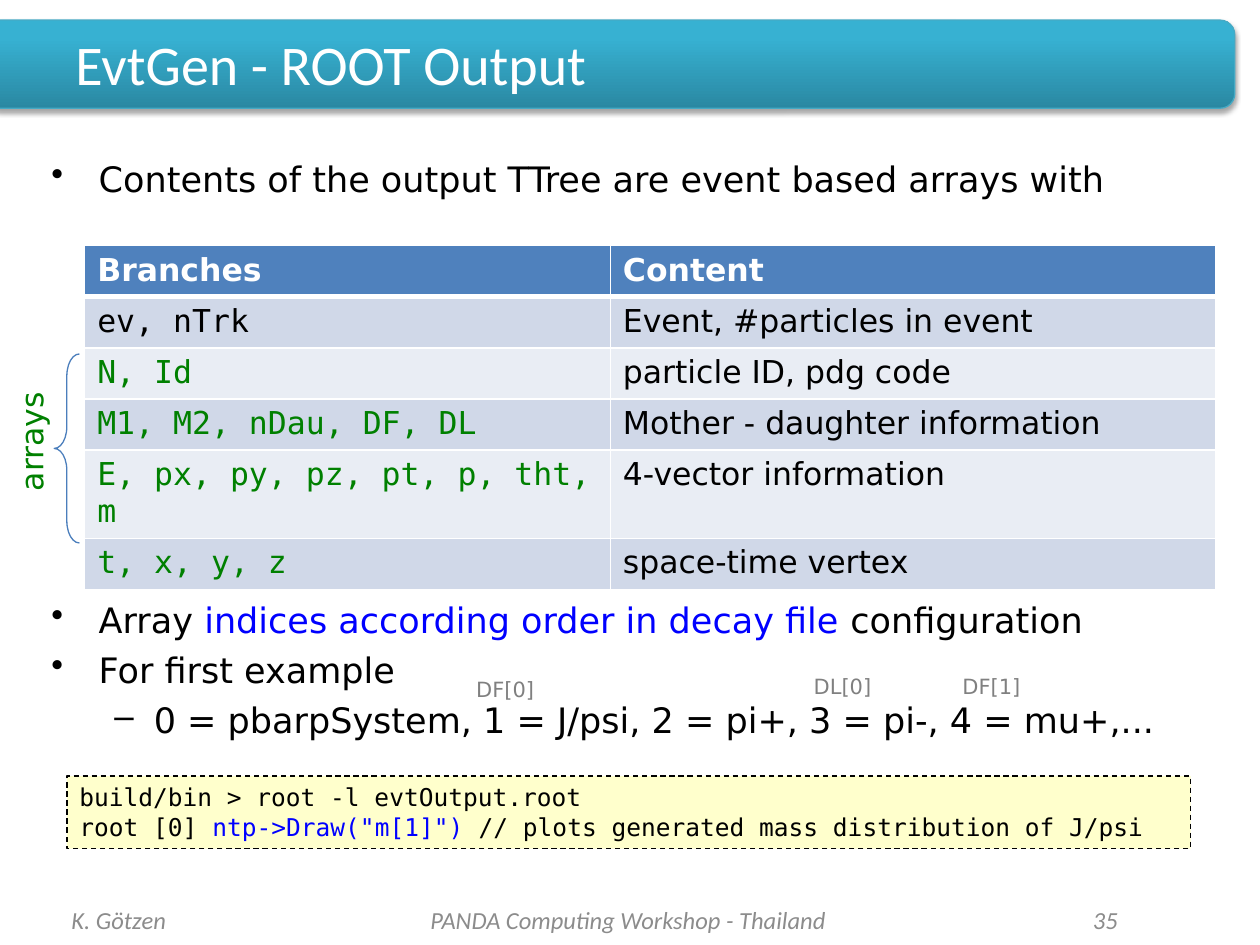
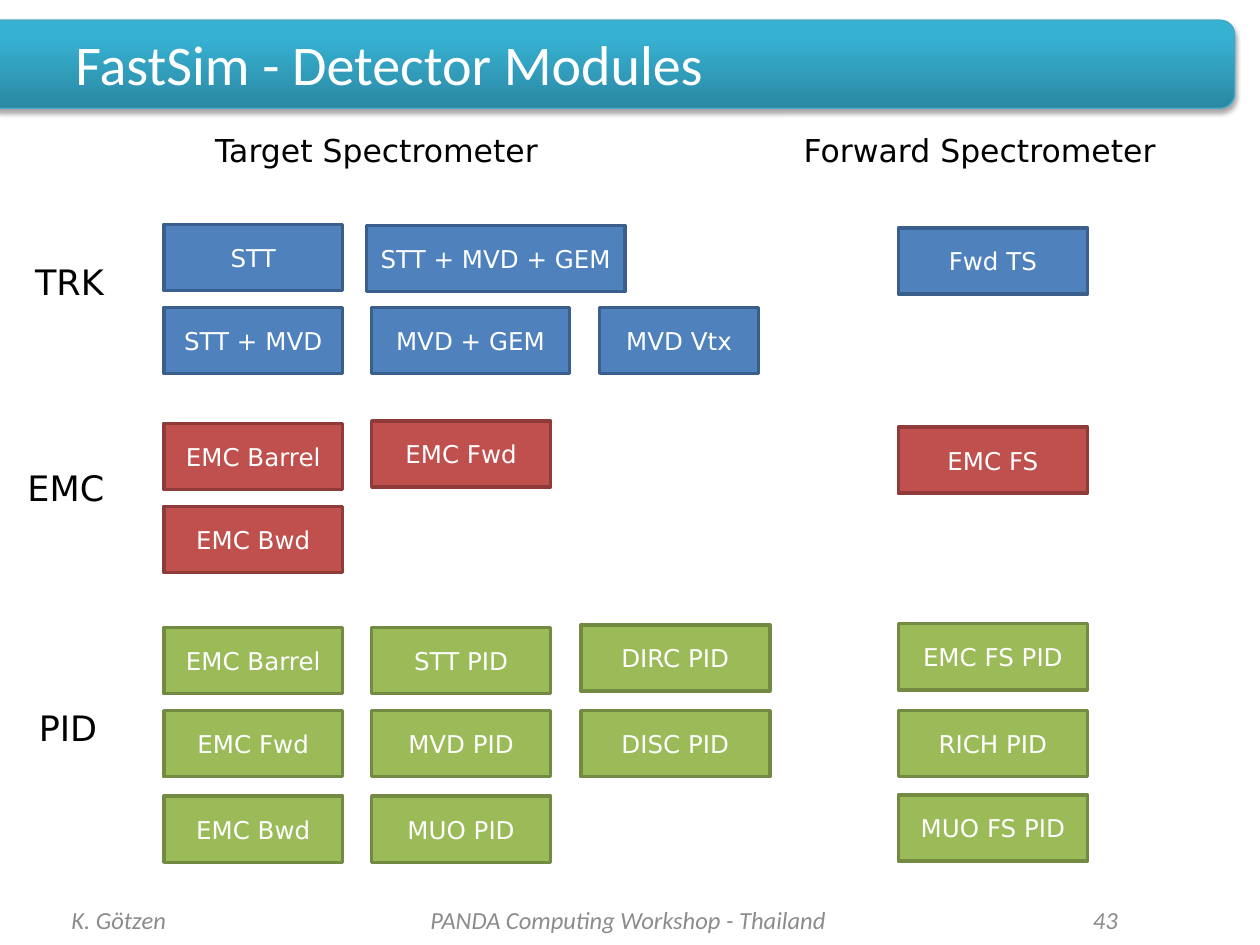
"""Build two workshop slides on event generator output and detector modules."""
import pptx
import pptx.util
import pptx.dml.color
import pptx.enum.dml
import pptx.enum.shapes
import pptx.enum.text
import pptx.oxml
import pptx.oxml.ns

Pt = pptx.util.Pt
RGBColor = pptx.dml.color.RGBColor
Shape = pptx.enum.shapes.MSO_SHAPE
Align = pptx.enum.text.PP_ALIGN
Anchor = pptx.enum.text.MSO_ANCHOR

WHITE = RGBColor(0xFF, 0xFF, 0xFF)
BLACK = RGBColor(0x00, 0x00, 0x00)
BAND_DARK = RGBColor(0x2A, 0x88, 0xA2)
BAND_LIGHT = RGBColor(0x37, 0xB1, 0xD2)
BAND_LINE = RGBColor(0x46, 0xAA, 0xC5)
FOOTER_GREY = RGBColor(0x8C, 0x8C, 0x8C)
LABEL_GREY = RGBColor(0x80, 0x80, 0x80)
HIGHLIGHT = RGBColor(0x00, 0x00, 0xFF)
ARRAY_GREEN = RGBColor(0x00, 0x80, 0x00)
BRACE_BLUE = RGBColor(0x4B, 0x7E, 0xBC)
CODE_YELLOW = RGBColor(0xFF, 0xFF, 0xCC)
ROW_DARK = RGBColor(0xD0, 0xD8, 0xE8)
ROW_LIGHT = RGBColor(0xE9, 0xED, 0xF4)
BLUE = RGBColor(0x4F, 0x81, 0xBD)
BLUE_LINE = RGBColor(0x3A, 0x5F, 0x8C)
RED = RGBColor(0xC0, 0x50, 0x4D)
RED_LINE = RGBColor(0x8E, 0x3B, 0x39)
GREEN = RGBColor(0x9B, 0xBB, 0x59)
GREEN_LINE = RGBColor(0x73, 0x8A, 0x42)

SANS = "DejaVu Sans"
MONO = "DejaVu Sans Mono"
TITLE = {"name": "Calibri", "size": Pt(32)}
FOOTER = {"name": "Calibri", "size": Pt(14), "italic": True}
BODY = {"name": SANS, "size": Pt(20)}
HEADING = {"name": SANS, "size": Pt(18)}
MODULE = {"name": SANS, "size": Pt(14)}
INDEX_LABEL = {"name": SANS, "size": Pt(12)}
CODE = {"name": MONO, "size": Pt(14)}
NAMESPACE = pptx.oxml.ns.nsdecls("a")


def write(paragraph, runs, font_format):
    """Add coloured runs with one font format to a paragraph."""
    for text, color in runs:
        run = paragraph.add_run()
        run.text = text
        run.font.color.rgb = color
        for name, value in font_format.items():
            setattr(run.font, name, value)


def add_text(slide, box, text, color, font_format, alignment=Align.LEFT, **frame_format):
    """Add a one-line text box and return it."""
    text_box = slide.shapes.add_textbox(*map(Pt, box))
    for name, value in frame_format.items():
        setattr(text_box.text_frame, name, value)
    paragraph = text_box.text_frame.paragraphs[0]
    paragraph.alignment = alignment
    write(paragraph, [(text, color)], font_format)
    return text_box


presentation = pptx.Presentation()
presentation.slide_width, presentation.slide_height = Pt(720), Pt(540)

slides = []
for title, number in (("EvtGen - ROOT Output", "35"), ("FastSim - Detector Modules", "43")):
    slide = presentation.slides.add_slide(presentation.slide_layouts[6])
    slides.append(slide)
    band = slide.shapes.add_shape(
        Shape.ROUNDED_RECTANGLE, Pt(-8.6), Pt(11.5), Pt(714.2), Pt(50.4))
    band.fill.gradient()
    band.fill.gradient_angle = 90
    for stop, color, position in zip(
            band.fill.gradient_stops, (BAND_DARK, BAND_LIGHT), (0, 0.8)):
        stop.color.rgb = color
        stop.position = position
    band.line.color.rgb = BAND_LINE
    band.line.width = Pt(0.75)
    band.shadow.inherit = False
    effects = band._element.spPr.find(pptx.oxml.ns.qn("a:effectLst"))
    effects.append(pptx.oxml.parse_xml(
        f'<a:outerShdw {NAMESPACE} blurRad="{Pt(3.1)}" dist="{Pt(1.8)}" dir="5400000" '
        'rotWithShape="0"><a:srgbClr val="000000"><a:alpha val="35000"/></a:srgbClr>'
        '</a:outerShdw>'))
    add_text(slide, (36, 13, 648, 46), title, WHITE, TITLE,
             word_wrap=True, vertical_anchor=Anchor.MIDDLE)
    for left, width, text, alignment in (
            (33.8, 167.8, "K. Götzen", Align.LEFT),
            (218.2, 281.5, "PANDA Computing Workshop - Thailand", Align.CENTER),
            (540, 105.8, number, Align.RIGHT)):
        add_text(slide, (left, 511.2, width, 28.8), text, FOOTER_GREY, FOOTER, alignment,
                 word_wrap=True, vertical_anchor=Anchor.MIDDLE)

output_slide, modules_slide = slides

bullet_blocks = (
    (86.4, [("•", 27, 27, [("Contents of the output TTree are event based arrays with", BLACK)])]),
    (338.3, [
        ("•", 27, 27, [("Array ", BLACK), ("indices according order in decay file ", HIGHLIGHT),
                       ("configuration", BLACK)]),
        ("•", 27, 27, [("For first example", BLACK)]),
        ("–", 58.5, 22.5, [("0 = pbarpSystem, 1 = J/psi, 2 = pi+, 3 = pi-, 4 = mu+,...", BLACK)]),
    ]),
)
for top, bullets in bullet_blocks:
    text_box = output_slide.shapes.add_textbox(Pt(22.3), Pt(top), Pt(675.4), Pt(28 * len(bullets) + 7))
    frame = text_box.text_frame
    frame.word_wrap = True
    for index, (mark, margin, hanging, runs) in enumerate(bullets):
        paragraph = frame.add_paragraph() if index else frame.paragraphs[0]
        paragraph.space_before = Pt(4.7 if index else 0)
        properties = paragraph._p.get_or_add_pPr()
        properties.set("marL", str(Pt(margin)))
        properties.set("indent", str(-Pt(hanging)))
        properties.append(pptx.oxml.parse_xml(f'<a:buChar {NAMESPACE} char="{mark}"/>'))
        write(paragraph, runs, BODY)

branch_rows = (
    ("Branches", "Content"),
    ("ev, nTrk", "Event, #particles in event"),
    ("N, Id", "particle ID, pdg code"),
    ("M1, M2, nDau, DF, DL", "Mother - daughter information"),
    ("E, px, py, pz, pt, p, tht, m", "4-vector information"),
    ("t, x, y, z", "space-time vertex"),
)
table = output_slide.shapes.add_table(
    len(branch_rows), 2, Pt(48.4), Pt(140.4), Pt(646.2), Pt(175.2)).table
for column, width in zip(table.columns, (300.4, 345.8)):
    column.width = Pt(width)
row_fills = (BLUE, ROW_DARK, ROW_LIGHT, ROW_DARK, ROW_LIGHT, ROW_DARK)
for row_index, (texts, fill) in enumerate(zip(branch_rows, row_fills)):
    table.rows[row_index].height = Pt(29.2)
    for column_index, text in enumerate(texts):
        cell = table.cell(row_index, column_index)
        is_header = row_index == 0
        is_array = row_index > 1 and column_index == 0
        color = WHITE if is_header else ARRAY_GREEN if is_array else BLACK
        font = SANS if is_header or column_index else MONO
        write(cell.text_frame.paragraphs[0], [(text, color)],
              {"name": font, "size": Pt(18), "bold": is_header})
        cell.fill.solid()
        cell.fill.fore_color.rgb = fill
        widths = {"lnL": 1, "lnR": 1, "lnT": 3 if row_index == 1 else 1, "lnB": 3 if is_header else 1}
        for position, (side, width) in enumerate(widths.items()):
            cell._tc.get_or_add_tcPr().insert(position, pptx.oxml.parse_xml(
                f'<a:{side} {NAMESPACE} w="{Pt(width)}"><a:solidFill>'
                f'<a:srgbClr val="{WHITE}"/></a:solidFill></a:{side}>'))

arrays_label = add_text(output_slide, (-18, 237.6, 71.3, 28.8), "arrays", ARRAY_GREEN, HEADING,
                        word_wrap=False)
arrays_label.rotation = 270
brace = output_slide.shapes.add_shape(Shape.LEFT_BRACE, Pt(31), Pt(202.3), Pt(14.4), Pt(108))
brace.adjustments[0] = 0.87
brace.fill.background()
brace.line.color.rgb = BRACE_BLUE
brace.line.width = Pt(0.75)
brace.shadow.inherit = False

code_box = output_slide.shapes.add_shape(Shape.RECTANGLE, Pt(38.2), Pt(443.5), Pt(642.2), Pt(41.4))
code_box.fill.solid()
code_box.fill.fore_color.rgb = CODE_YELLOW
code_box.line.color.rgb = BLACK
code_box.line.width = Pt(0.75)
code_box.line.dash_style = pptx.enum.dml.MSO_LINE.DASH
code_box.shadow.inherit = False
code_box.text_frame.vertical_anchor = Anchor.TOP
code_lines = (
    [("build/bin > root -l evtOutput.root", BLACK)],
    [("root [0] ", BLACK), ('ntp->Draw("m[1]") ', HIGHLIGHT),
     ("// plots generated mass distribution of J/psi", BLACK)],
)
for index, runs in enumerate(code_lines):
    paragraph = code_box.text_frame.add_paragraph() if index else code_box.text_frame.paragraphs[0]
    paragraph.alignment = Align.LEFT
    write(paragraph, runs, CODE)

for left, top, text in ((265, 383, "DF[0]"), (457.9, 381.6, "DL[0]"), (542.9, 381.6, "DF[1]")):
    add_text(output_slide, (left, top, 49.7, 21.6), text, LABEL_GREY, INDEX_LABEL, word_wrap=False)

for left, width, text in ((115.9, 202.3, "Target Spectrometer"), (452.2, 218.9, "Forward Spectrometer")):
    add_text(modules_slide, (left, 71.3, width, 28.8), text, BLACK, HEADING, word_wrap=False)
for left, top, width, text in (
        (13, 145.4, 54.7, "TRK"), (8.6, 262.8, 58.3, "EMC"), (15.1, 400.3, 50.4, "PID")):
    add_text(modules_slide, (left, top, width, 31.7), text, BLACK, BODY, word_wrap=False)

FIRST, SECOND, THIRD, FORWARD = (93.6, 102.2), (212.4, 102.2), (331.9, 108), (513.4, 108)
module_groups = (
    (BLUE, BLUE_LINE, (
        (FIRST, ((128.2, "STT"), (175.7, "STT + MVD"))),
        ((209.5, 147.6), ((128.9, "STT + MVD + GEM"),)),
        ((212.4, 113), ((175.7, "MVD + GEM"),)),
        ((342.7, 90.7), ((175.7, "MVD Vtx"),)),
        (FORWARD, ((130.3, "Fwd TS"),)))),
    (RED, RED_LINE, (
        (FIRST, ((241.9, "EMC Barrel"), (289.4, "EMC Bwd"))),
        (SECOND, ((240.5, "EMC Fwd"),)),
        (FORWARD, ((244.1, "EMC FS"),)))),
    (GREEN, GREEN_LINE, (
        (FIRST, ((358.6, "EMC Barrel"), (406.1, "EMC Fwd"), (455, "EMC Bwd"))),
        (SECOND, ((358.6, "STT PID"), (406.1, "MVD PID"), (455, "MUO PID"))),
        (THIRD, ((357.1, "DIRC PID"), (406.1, "DISC PID"))),
        (FORWARD, ((356.4, "EMC FS PID"), (406.1, "RICH PID"), (454.3, "MUO FS PID"))))),
)
for fill, line, columns in module_groups:
    for (left, width), modules in columns:
        for top, label in modules:
            module = modules_slide.shapes.add_shape(
                Shape.RECTANGLE, Pt(left), Pt(top), Pt(width), Pt(37.8))
            module.fill.solid()
            module.fill.fore_color.rgb = fill
            module.line.color.rgb = line
            module.line.width = Pt(2)
            module.shadow.inherit = False
            module.text_frame.vertical_anchor = Anchor.MIDDLE
            paragraph = module.text_frame.paragraphs[0]
            paragraph.alignment = Align.CENTER
            write(paragraph, [(label, WHITE)], MODULE)

presentation.save("out.pptx")
